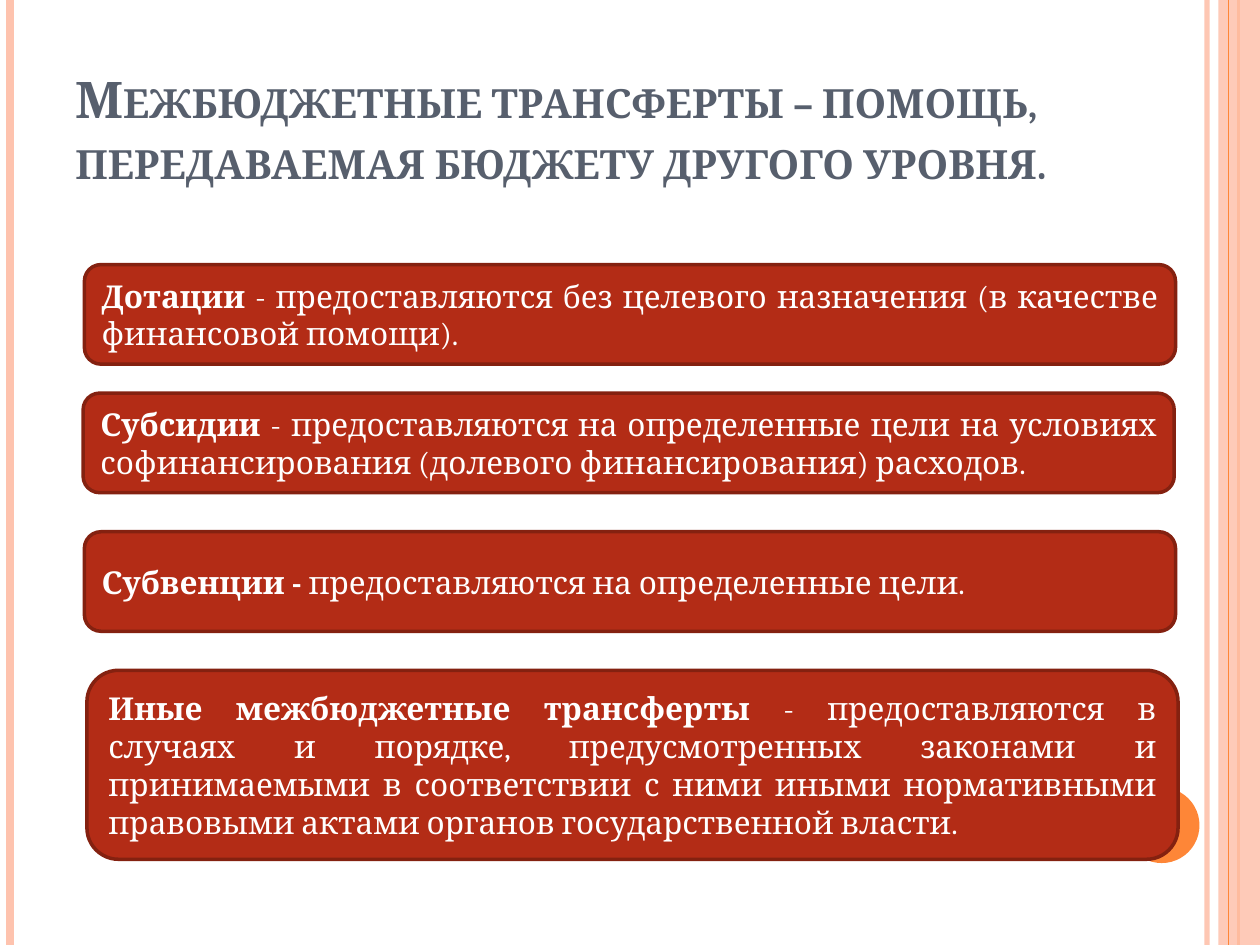
"""Builds a slide on the kinds of intergovernmental budget transfers."""
from lxml import etree
from pptx import Presentation
from pptx.dml.color import RGBColor
from pptx.enum.shapes import MSO_CONNECTOR, MSO_SHAPE
from pptx.enum.text import MSO_ANCHOR, PP_ALIGN
from pptx.oxml.ns import qn
from pptx.util import Inches, Pt

STRAIGHT = MSO_CONNECTOR.STRAIGHT
RECTANGLE, OVAL = MSO_SHAPE.RECTANGLE, MSO_SHAPE.OVAL
CARD = MSO_SHAPE.FLOWCHART_ALTERNATE_PROCESS
MIDDLE, BOTTOM = MSO_ANCHOR.MIDDLE, MSO_ANCHOR.BOTTOM
LEFT, JUSTIFY = PP_ALIGN.LEFT, PP_ALIGN.JUSTIFY

WIDTH, HEIGHT = 10, 7.5
CARD_LEFT, CARD_WIDTH, CARD_HEIGHT = 0.67, 8.66, 0.79
COLORS = {
    "peach": "FEC3AE",
    "orange": "FE8637",
    "slate": "575F6D",
    "brick": "B32C16",
    "maroon": "842110",
    "white": "FFFFFF",
}
TITLE_FONT = {"name": "Cambria", "size": Pt(28.8), "bold": True}
TERM_FONT = {"name": "Cambria", "size": Pt(18), "bold": True}
MEANING_FONT = {**TERM_FONT, "bold": False}
TITLE = "Межбюджетные трансферты – помощь, передаваемая бюджету другого уровня."
TRANSFERS = [
    (CARD_LEFT, 2.1, CARD_HEIGHT, JUSTIFY, "Дотации ",
     "- предоставляются без целевого назначения (в качестве финансовой помощи)."),
    (CARD_LEFT - 0.01, 3.12, CARD_HEIGHT, JUSTIFY, "Субсидии",
     " - предоставляются на определенные цели на условиях софинансирования "
     "(долевого финансирования) расходов."),
    (CARD_LEFT, 4.22, CARD_HEIGHT, LEFT, "Субвенции - ",
     "предоставляются на определенные цели."),
    (CARD_LEFT + 0.02, 5.32, 1.5, JUSTIFY, "Иные межбюджетные трансферты ",
     "- предоставляются в случаях и порядке, предусмотренных законами и "
     "принимаемыми в соответствии с ними иными нормативными правовыми актами "
     "органов государственной власти."),
]


def rgb(color):
    """Return the named colour."""
    return RGBColor.from_string(COLORS[color])


def set_values(target, values):
    """Set each attribute of target from a dict."""
    for name, value in values.items():
        setattr(target, name, value)


def set_opacity(fill_format, percent):
    """Make a solid colour partly transparent."""
    color = fill_format._xPr.find(qn("a:solidFill"))[0]
    etree.SubElement(color, qn("a:alpha"), val=str(percent * 1000))


def add_stripe(slide, x, color, weight, opacity=100):
    """Draw a vertical line over the full slide height."""
    stripe = slide.shapes.add_connector(
        STRAIGHT, Inches(x), 0, Inches(x), Inches(HEIGHT))
    stripe.line.width = Pt(weight)
    stripe.line.color.rgb = rgb(color)
    if opacity < 100:
        set_opacity(stripe.line.fill, opacity)
    etree.SubElement(stripe._element.spPr, qn("a:effectLst"))


def add_block(slide, kind, box, fill, outline=None):
    """Add a flat filled shape with an optional outline."""
    block = slide.shapes.add_shape(kind, *map(Inches, box))
    block.shadow.inherit = False
    block.fill.solid()
    block.fill.fore_color.rgb = rgb(fill)
    if outline:
        block.line.color.rgb = rgb(outline)
        block.line.width = Pt(2)
    else:
        block.line.fill.background()
    return block


def add_run(paragraph, words, font_values, color):
    """Append formatted words to a paragraph."""
    run = paragraph.add_run()
    run.text = words
    set_values(run.font, font_values)
    run.font.color.rgb = rgb(color)
    return run


def add_title(slide):
    """Add the heading in small capitals."""
    heading = slide.shapes.add_textbox(*map(Inches, (0.5, 0.3, 8.17, 1.25)))
    frame = heading.text_frame
    set_values(frame, {"word_wrap": True, "vertical_anchor": BOTTOM})
    run = add_run(frame.paragraphs[0], TITLE, TITLE_FONT, "slate")
    run.font._element.set("cap", "small")


def add_transfer(slide, left, top, height, alignment, term, meaning):
    """Add a card with a bold term and its meaning."""
    card = add_block(slide, CARD, (left, top, CARD_WIDTH, height),
                     "brick", "maroon")
    frame = card.text_frame
    set_values(frame, {"word_wrap": True, "vertical_anchor": MIDDLE})
    paragraph = frame.paragraphs[0]
    paragraph.alignment = alignment
    add_run(paragraph, term, TERM_FONT, "white")
    add_run(paragraph, meaning, MEANING_FONT, "white")


def add_decor(slide):
    """Add the side stripes, the right band and the circle."""
    add_stripe(slide, 9.58, "peach", 3, 93)
    add_stripe(slide, 0.08, "peach", 4.5)
    add_stripe(slide, 9.83, "orange", 1.5)
    band = add_block(slide, RECTANGLE, (9.67, 0, WIDTH - 9.67, HEIGHT), "peach")
    set_opacity(band.fill, 87)
    add_stripe(slide, 9.75, "orange", 0.75)
    add_block(slide, OVAL, (8.92, 6.25, 0.6, 0.6), "orange")


def main():
    """Build and save the slide."""
    deck = Presentation()
    set_values(deck, {"slide_width": Inches(WIDTH),
                      "slide_height": Inches(HEIGHT)})
    slide = deck.slides.add_slide(deck.slide_layouts[6])
    add_decor(slide)
    add_title(slide)
    for transfer in TRANSFERS:
        add_transfer(slide, *transfer)
    deck.save("out.pptx")


if __name__ == "__main__":
    main()
